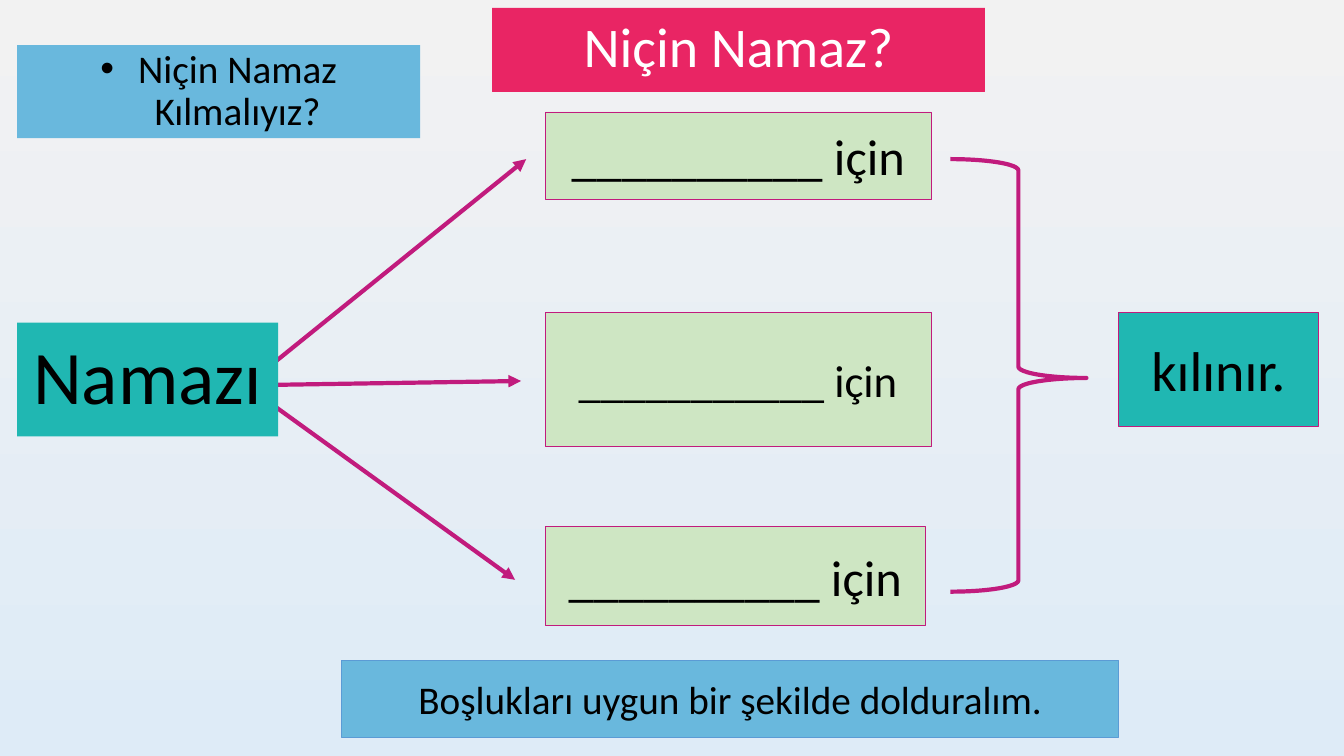
from lxml import etree
from pptx import Presentation
from pptx.dml.color import RGBColor
from pptx.enum.shapes import MSO_CONNECTOR, MSO_SHAPE
from pptx.enum.text import MSO_ANCHOR, MSO_AUTO_SIZE, PP_ALIGN
from pptx.oxml.ns import qn
from pptx.util import Cm, Pt

COLORS = {
    "magenta": "C11B7D", "green": "CEE6C3", "teal": "20B7B2", "sky": "69B8DD",
    "blue": "5B9BD5", "pink": "E92564", "black": "000000", "white": "FFFFFF",
    "sky top": "F2F2F2", "sky bottom": "DEEBF7",
}
RGB = {name: RGBColor.from_string(value) for name, value in COLORS.items()}


def fill_box(box, text, size, fill, line=None, ink="black", spacing=1.0):
    """Colour a box and write its single centred line of text."""
    box.fill.solid()
    box.fill.fore_color.rgb = RGB[fill]
    if line:
        box.line.color.rgb = RGB[line]
        box.line.width = Pt(0.5)
    else:
        box.line.fill.background()
    frame = box.text_frame
    frame.text = text
    frame_format = {"word_wrap": True, "auto_size": MSO_AUTO_SIZE.NONE,
                    "vertical_anchor": MSO_ANCHOR.MIDDLE}
    for attribute, value in frame_format.items():
        setattr(frame, attribute, value)
    paragraph = frame.paragraphs[0]
    paragraph_format = {"alignment": PP_ALIGN.CENTER, "line_spacing": spacing,
                        "space_before": Pt(0)}
    for attribute, value in paragraph_format.items():
        setattr(paragraph, attribute, value)
    font = paragraph.runs[0].font
    for attribute, value in {"name": "Calibri", "size": Pt(size)}.items():
        setattr(font, attribute, value)
    font.color.rgb = RGB[ink]


presentation = Presentation()
presentation.slide_width, presentation.slide_height = Cm(33.87), Cm(19.05)
slide = presentation.slides.add_slide(presentation.slide_layouts[1])
shapes = slide.shapes

backdrop = slide.background.fill
backdrop.gradient()
backdrop.gradient_angle = 270
for stop, position, color in zip(backdrop.gradient_stops, (0, 1), ("sky top", "sky bottom")):
    stop.position = position
    stop.color.rgb = RGB[color]

# Arrows from the subject to the three reasons
arrows = [
    (6.15, 9.75, 13.26, 4.01),
    (6.83, 9.7, 13.13, 9.6),
    (6.22, 9.73, 12.98, 14.61),
]
for ends in arrows:
    arrow = shapes.add_connector(MSO_CONNECTOR.STRAIGHT, *map(Cm, ends))
    arrow.line.color.rgb = RGB["magenta"]
    arrow.line.width = Pt(3)
    etree.SubElement(arrow.line._get_or_add_ln(), qn("a:tailEnd"), type="triangle")
    etree.SubElement(arrow._element.spPr, qn("a:effectLst"))

# Brace that gathers the reasons
brace = shapes.add_shape(MSO_SHAPE.RIGHT_BRACE, Cm(23.95), Cm(4.01), Cm(3.43), Cm(10.9))
brace.shadow.inherit = False
brace.fill.background()
brace.line.color.rgb = RGB["magenta"]
brace.line.width = Pt(3)
brace.adjustments[0], brace.adjustments[1] = 0.083, 0.506

# Boxes: place, text, size, fill, line, text colour, line spacing
boxes = [
    ((13.74, 2.82, 9.73, 2.21), "__________ için", 36, "green", "magenta", "black", 1.0),
    ((13.74, 7.87, 9.73, 3.38), "___________ için", 32, "green", "magenta", "black", 1.0),
    ((13.74, 13.26, 9.58, 2.51), "__________ için", 36, "green", "magenta", "black", 1.0),
    ((28.19, 7.87, 5.03, 2.87), "kılınır.", 40, "teal", "magenta", "black", 1.0),
    ((8.61, 16.64, 19.58, 1.93), "Boşlukları uygun bir şekilde dolduralım.", 28,
     "sky", "blue", "black", 1.0),
    ((12.4, 0.2, 12.42, 2.11), "Niçin Namaz?", 40, "pink", "pink", "white", 0.9),
]
for place, *content in boxes:
    box = shapes.add_shape(MSO_SHAPE.RECTANGLE, *map(Cm, place))
    box.shadow.inherit = False
    fill_box(box, *content)

# Subject and question, brought in front of the arrows
subject, question = shapes.title, slide.placeholders[1]
question_layout = question.text_frame.paragraphs[0]._p.get_or_add_pPr()
question_layout.set("marL", "0")
question_layout.set("indent", "0")
etree.SubElement(question_layout, qn("a:buNone"))
headings = [
    (subject, (0.43, 8.13, 6.58, 2.87), "Namazı", 54, "teal"),
    (question, (0.43, 1.14, 10.16, 2.34), "Niçin Namaz Kılmalıyız?", 28, "sky"),
]
for heading, place, text, size, fill in headings:
    heading.left, heading.top, heading.width, heading.height = map(Cm, place)
    fill_box(heading, text, size, fill, spacing=0.9)
    heading._element.getparent().append(heading._element)

presentation.save("out.pptx")
